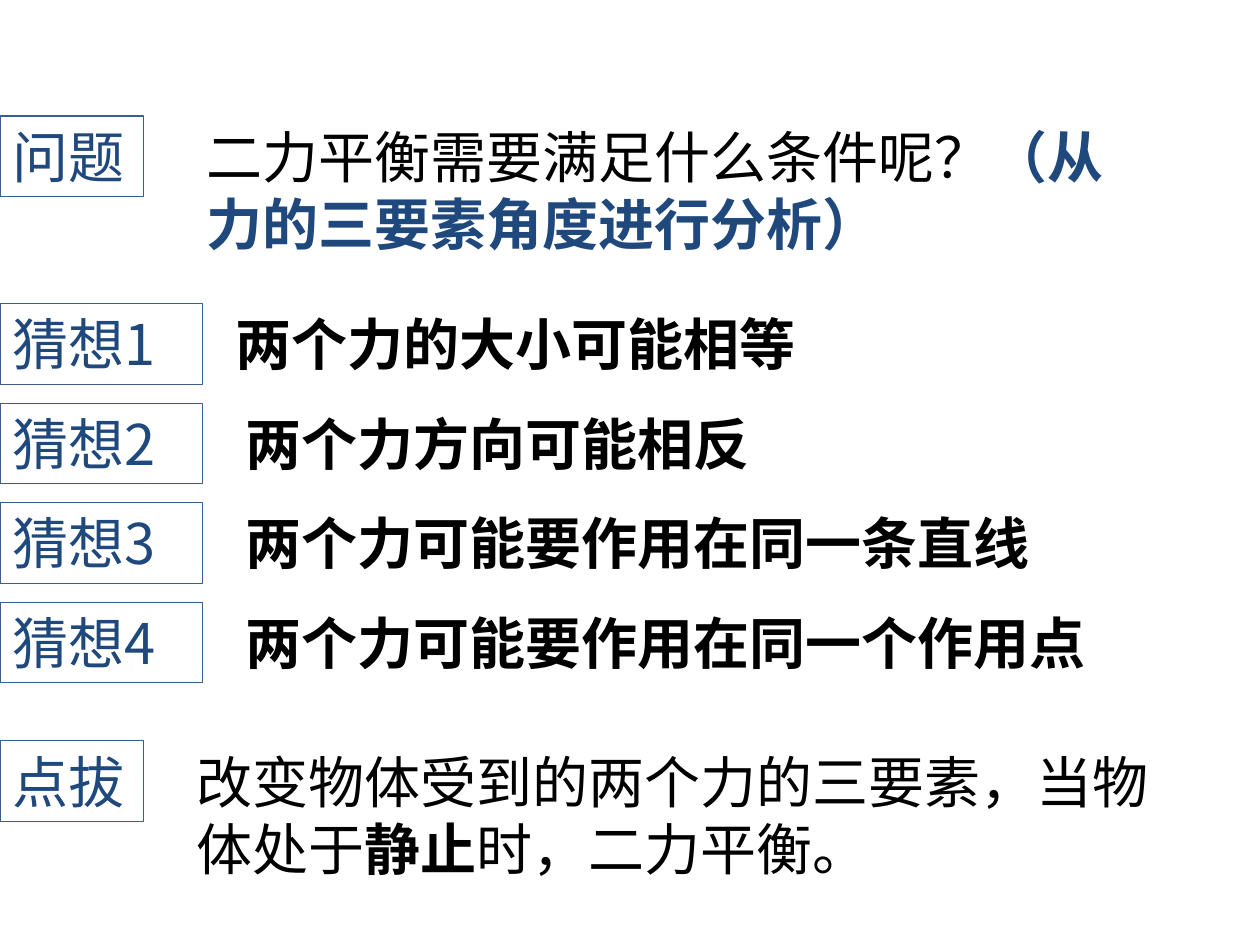
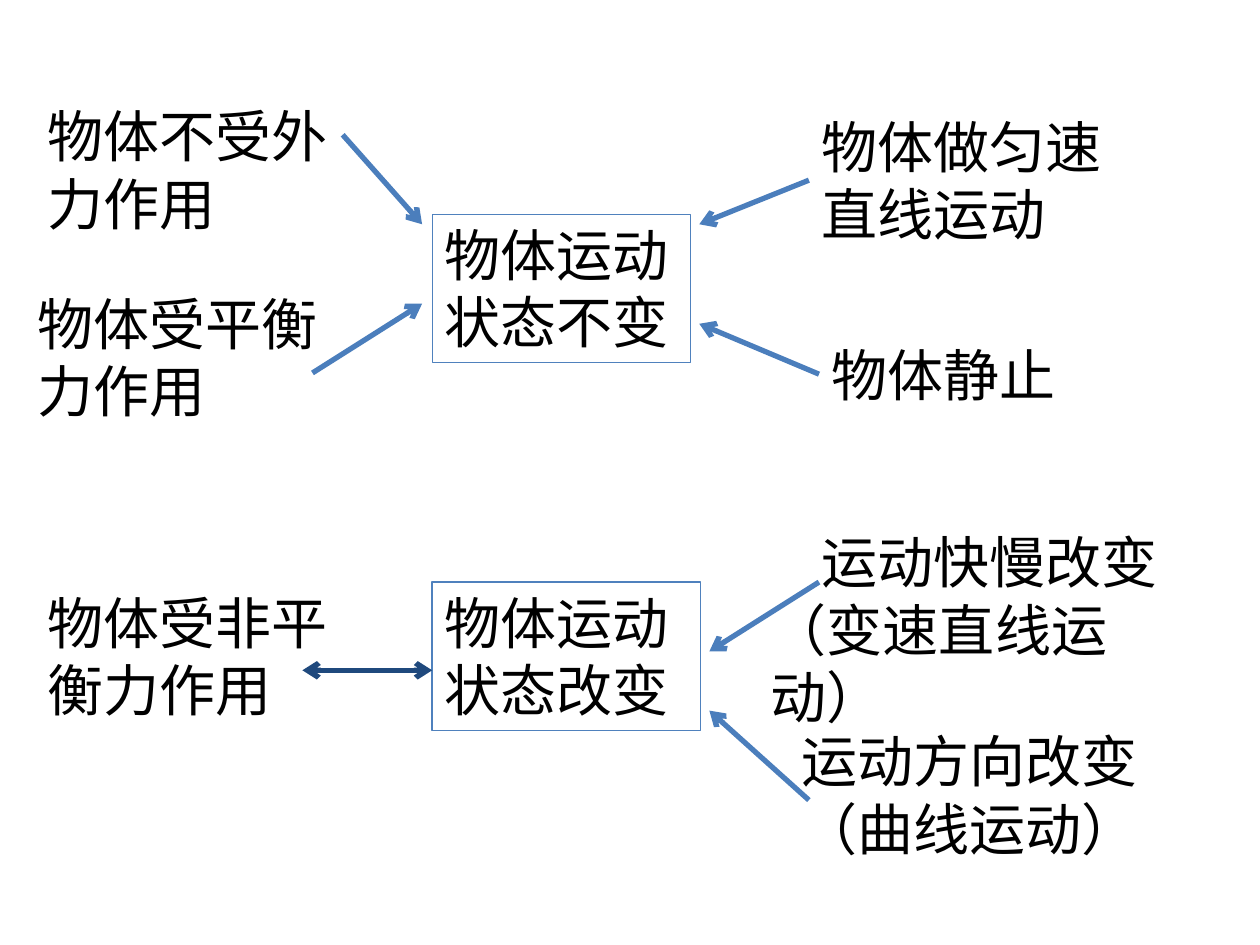
from dataclasses import dataclass

from lxml import etree
from pptx import Presentation
from pptx.dml.color import RGBColor
from pptx.enum.shapes import MSO_CONNECTOR, MSO_SHAPE
from pptx.enum.text import MSO_ANCHOR, PP_ALIGN
from pptx.oxml.ns import qn
from pptx.util import Inches, Pt

RECTANGLE = MSO_SHAPE.RECTANGLE
STRAIGHT = MSO_CONNECTOR.STRAIGHT
TOP = MSO_ANCHOR.TOP
LEFT = PP_ALIGN.LEFT


@dataclass(frozen=True)
class Theme:
    black: RGBColor = RGBColor(0x00, 0x00, 0x00)
    navy: RGBColor = RGBColor(0x1F, 0x49, 0x7D)
    label_border: RGBColor = RGBColor(0x3A, 0x5F, 0x8C)
    state_border: RGBColor = RGBColor(0x4F, 0x81, 0xBD)
    arrow: RGBColor = RGBColor(0x4B, 0x7E, 0xBC)
    body_font: str = "Calibri"
    chinese_font: str = "Noto Sans CJK SC"
    size: Pt = Pt(32)
    line_pitch: Pt = Pt(38.4)
    border_width: Pt = Pt(0.75)
    arrow_width: Pt = Pt(3)


THEME = Theme()
ONE_LINE, TWO_LINES = 0.64, 1.18


def add_text(slide, text, left, top, width, height=ONE_LINE, *, border=None,
             font=THEME.body_font, color=THEME.black, bold=False, indent=0):
    """Place text, boxed if border is given; text may be a list of
    (words, color, bold) runs, and a newline starts a paragraph."""
    place = [Inches(n) for n in (left, top, width, height)]
    if border:
        box = slide.shapes.add_shape(RECTANGLE, *place)
        box.shadow.inherit = False
        box.fill.background()
        box.line.color.rgb = border
        box.line.width = THEME.border_width
    else:
        box = slide.shapes.add_textbox(*place)
    frame = box.text_frame
    frame.word_wrap = True
    frame.vertical_anchor = TOP

    if isinstance(text, str):
        paragraphs = [[(line, color, bold)] for line in text.split("\n")]
    else:
        paragraphs = [text]
    for number, runs in enumerate(paragraphs):
        paragraph = frame.add_paragraph() if number else frame.paragraphs[0]
        paragraph.alignment = LEFT
        paragraph.line_spacing = THEME.line_pitch
        if indent:
            paragraph._p.get_or_add_pPr().set("indent", str(Inches(indent)))
        for words, run_color, run_bold in runs:
            run = paragraph.add_run()
            run.text = words
            run.font.name = font
            run.font.size = THEME.size
            run.font.bold = run_bold
            run.font.color.rgb = run_color
            east_asian = etree.SubElement(run._r.get_or_add_rPr(), qn("a:ea"))
            east_asian.set("typeface", THEME.chinese_font)


def add_arrow(slide, start, end, color=THEME.arrow, both_ends=False):
    arrow = slide.shapes.add_connector(
        STRAIGHT, *[Inches(n) for n in (*start, *end)])
    arrow.line.color.rgb = color
    arrow.line.width = THEME.arrow_width
    outline = arrow.line._get_or_add_ln()
    for tip in ("a:headEnd", "a:tailEnd") if both_ends else ("a:tailEnd",):
        etree.SubElement(outline, qn(tip)).set("type", "arrow")
    etree.SubElement(arrow._element.spPr, qn("a:effectLst"))


deck = Presentation()
deck.slide_width, deck.slide_height = Inches(10), Inches(7.5)
blank = deck.slide_layouts[6]

# Slide 1: question, guesses and hint
inquiry = deck.slides.add_slide(blank)
question_top, hint_top = 0.92, 5.88
guess_top, guess_step = 2.41, 0.79
guesses = [
    ("两个力的大小可能相等", 1.77, 4.72),
    ("两个力方向可能相反", 1.85, 4.65),
    ("两个力可能要作用在同一条直线", 1.85, 6.69),
    ("两个力可能要作用在同一个作用点", 1.85, 7.48),
]
labels = [("问题", question_top, 1.14), ("点拔", hint_top, 1.14)]
for index, (guess, left, width) in enumerate(guesses):
    top = guess_top + index * guess_step
    labels.append((f"猜想{index + 1}", top, 1.61))
    add_text(inquiry, guess, left, top, width, bold=True)
for label, top, width in labels:
    add_text(inquiry, label, 0, top, width, border=THEME.label_border,
             font=THEME.chinese_font, color=THEME.navy)

question = [
    ("二力平衡需要满足什么条件呢？", THEME.black, False),
    ("（从力的三要素角度进行分析）", THEME.navy, True),
]
hint = [
    ("改变物体受到的两个力的三要素，当物体处于", THEME.black, False),
    ("静止", THEME.black, True),
    ("时，二力平衡。", THEME.black, False),
]
add_text(inquiry, question, 1.54, question_top, 7.48, TWO_LINES)
add_text(inquiry, hint, 1.46, hint_top, 7.8, TWO_LINES)

# Slide 2: forces and states of motion
summary = deck.slides.add_slide(blank)
for state, top, width in [("物体运动\n状态不变", 1.7, 2.05),
                          ("物体运动\n状态改变", 4.62, 2.13)]:
    add_text(summary, state, 3.43, top, width, TWO_LINES,
             border=THEME.state_border)

for cause, left, top, width, height in [
    ("物体不受外力作用", 0.28, 0.76, 2.6, TWO_LINES),
    ("物体受平衡力作用", 0.2, 2.25, 2.6, TWO_LINES),
    ("物体做匀速直线运动", 6.42, 0.84, 2.6, TWO_LINES),
    ("物体静止", 6.5, 2.65, 2.6, ONE_LINE),
    ("物体受非平衡力作用", 0.28, 4.62, 2.6, TWO_LINES),
    ("运动方向改变（曲线运动）", 6.26, 5.72, 2.91, TWO_LINES),
]:
    add_text(summary, cause, left, top, width, height)
add_text(summary, "运动快慢改变（变速直线运动）", 6.02, 4.14, 3.39, TWO_LINES,
         indent=0.4)

for start, end in [
    ((2.72, 1.07), (3.35, 1.78)),
    ((2.48, 2.96), (3.35, 2.41)),
    ((6.42, 1.43), (5.55, 1.78)),
    ((6.5, 2.97), (5.55, 2.57)),
    ((6.5, 4.62), (5.63, 5.17)),
    ((6.42, 6.35), (5.63, 5.64)),
]:
    add_arrow(summary, start, end)
add_arrow(summary, (2.4, 5.32), (3.43, 5.32), THEME.navy, both_ends=True)

deck.save("out.pptx")
